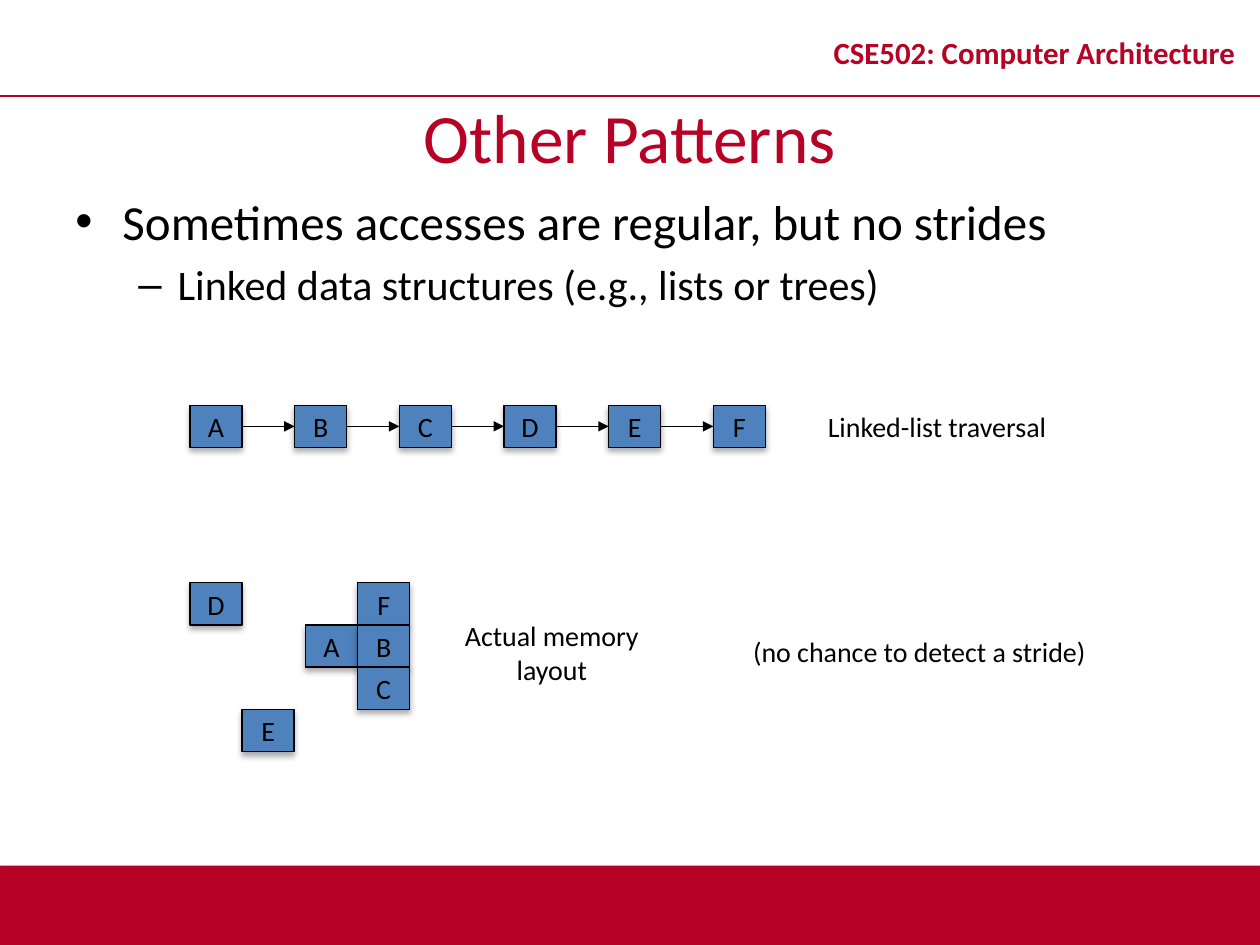
"""Build the Other Patterns slide on linked data structures."""
from lxml.etree import SubElement as Sub
from pptx import Presentation
from pptx.dml.color import RGBColor as RGB
from pptx.enum.shapes import MSO_CONNECTOR as Link, MSO_SHAPE as Form
from pptx.enum.text import MSO_ANCHOR as Anchor, PP_ALIGN as Align
from pptx.oxml.ns import qn
from pptx.util import Cm, Pt

HUES = {"red": "B60225", "blue": "4F81BD", "black": "000000"}


def shade(shape, alpha, blur, drop):
    shape.shadow.inherit = False
    glow = Sub(shape.element.spPr.find(qn("a:effectLst")), qn("a:outerShdw"),
               blurRad=str(Pt(blur)), dist=str(Pt(drop)), dir="5400000", rotWithShape="0")
    tint = Sub(glow, qn("a:srgbClr"), val=HUES["black"])
    Sub(tint, qn("a:alpha"), val=str(alpha * 1000))


def write(para, text, size, hue="black", bold=False, align=Align.CENTER):
    para.alignment = align
    run = para.add_run()
    run.text = text
    run.font.name = "Calibri"
    run.font.size = Pt(size)
    run.font.bold = bold
    run.font.color.rgb = RGB.from_string(HUES[hue])


deck = Presentation()
deck.slide_width, deck.slide_height = Cm(25.4), Cm(19.05)
slide = deck.slides.add_slide(deck.slide_layouts[6])
shapes = slide.shapes

foot = shapes.add_shape(Form.RECTANGLE, 0, Cm(17.45), Cm(25.4), Cm(1.6))
foot.fill.solid()
foot.fill.fore_color.rgb = RGB.from_string(HUES["red"])
foot.line.fill.background()
shade(foot, 35, 3.1, 1.8)

wide, high, step = 1.05, 0.85, 2.11
left, top = 3.83, 8.17
mid = top + high / 2
lines = [(0, 1.93, 25.4, "red", 1, False)]
for i in range(5):
    start = left + i * step
    lines.append((start + wide, mid, start + step, "black", 0.75, True))
for x, y, end, hue, width, arrow in lines:
    line = shapes.add_connector(Link.STRAIGHT, Cm(x), Cm(y), Cm(end), Cm(y))
    line.line.color.rgb = RGB.from_string(HUES[hue])
    line.line.width = Pt(width)
    props = line.element.spPr
    if arrow:
        Sub(props.find(qn("a:ln")), qn("a:tailEnd"), type="triangle")
    Sub(props, qn("a:effectLst"))

boxes = [(name, left + i * step, top) for i, name in enumerate("ABCDEF")]
base, stack = 11.75, 7.21
boxes += [
    ("F", stack, base),
    ("A", stack - wide, base + high),
    ("B", stack, base + high),
    ("C", stack, base + 2 * high),
    ("D", left, base),
    ("E", left + wide, base + 3 * high),
]
for name, x, y in boxes:
    box = shapes.add_shape(Form.RECTANGLE, Cm(x), Cm(y), Cm(wide), Cm(high))
    box.fill.solid()
    box.fill.fore_color.rgb = RGB.from_string(HUES["blue"])
    box.line.color.rgb = RGB.from_string(HUES["black"])
    box.line.width = Pt(0.75)
    shade(box, 32, 3.5, 2.2)
    frame = box.text_frame
    frame.word_wrap = False
    frame.vertical_anchor = Anchor.MIDDLE
    write(frame.paragraphs[0], name, 16)

notes = [
    (16.31, 0.33, 9.09, 1.6, ["CSE502: Computer Architecture"], 17.6, "red", True, 0.8),
    (0, 1.93, 25.4, 1.6, ["Other Patterns"], 39.6, "red", False, 1),
    (16.31, 8.13, 5.16, 0.94, ["Linked-list traversal"], 16, "black", False, 1),
    (9.07, 12.34, 4.11, 1.63, ["Actual memory", "layout"], 16, "black", False, 1),
    (14.38, 12.67, 8.31, 0.94, ["(no chance to detect a stride)"], 16, "black", False, 1),
]
for x, y, w, h, rows, size, hue, bold, space in notes:
    frame = shapes.add_textbox(Cm(x), Cm(y), Cm(w), Cm(h)).text_frame
    frame.word_wrap = True
    frame.vertical_anchor = Anchor.MIDDLE
    for i, row in enumerate(rows):
        para = frame.add_paragraph() if i else frame.paragraphs[0]
        para.line_spacing = space
        write(para, row, size, hue, bold)

points = [
    ("Sometimes accesses are regular, but no strides", 28, "•", 0.95, 0.95, 0),
    ("Linked data structures (e.g., lists or trees)", 24, "–", 2.06, 0.79, 4.8),
]
frame = shapes.add_textbox(Cm(1.27), Cm(3.73), Cm(22.86), Cm(13.59)).text_frame
frame.word_wrap = True
for i, (text, size, mark, inset, hang, gap) in enumerate(points):
    para = frame.add_paragraph() if i else frame.paragraphs[0]
    para.level = i
    para.space_before = Pt(gap)
    props = para._p.get_or_add_pPr()
    props.set("marL", str(Cm(inset)))
    props.set("indent", str(-Cm(hang)))
    Sub(props, qn("a:buFont"), typeface="Arial")
    Sub(props, qn("a:buChar"), char=mark)
    write(para, text, size, align=Align.LEFT)

deck.save("out.pptx")
